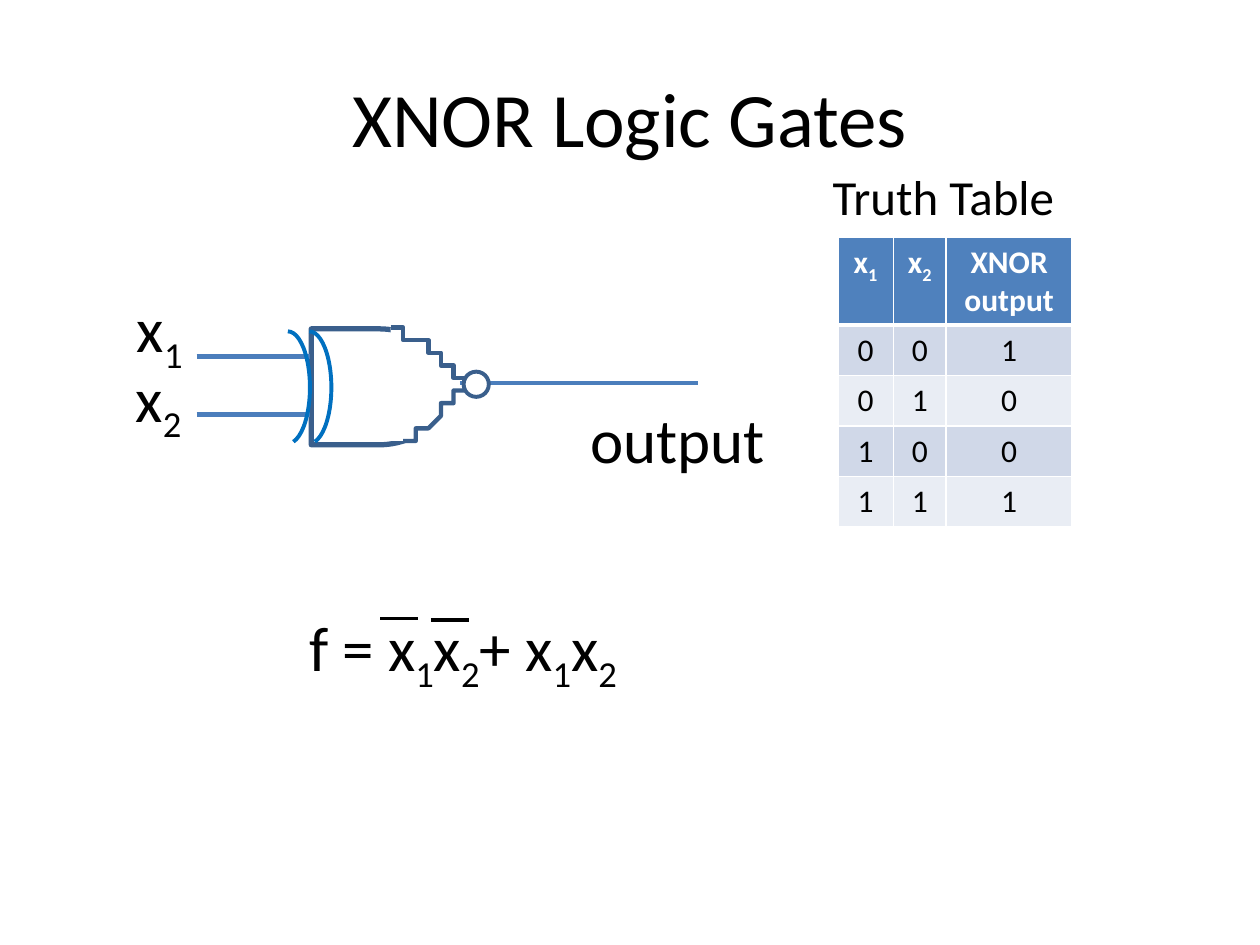
from lxml.etree import SubElement
from pptx import Presentation
from pptx.dml.color import RGBColor
from pptx.enum.shapes import MSO_CONNECTOR, MSO_SHAPE
from pptx.enum.text import MSO_ANCHOR, PP_ALIGN
from pptx.oxml.ns import qn
from pptx.util import Inches, Pt

BLACK, WHITE = "000000", "FFFFFF"
HEAD, BANDS = "4F81BD", ("D0D8E8", "E9EDF4")
WIRE, EDGE, ARC = "4B7EBC", "3A5F8C", "0070C0"


def unit(n):
    """One grid step is a tenth of an inch: 100 columns by 75 rows."""
    return Inches(n / 10)


def color(code):
    return RGBColor.from_string(code)


def curve(start, *parts, steps=12):
    """Points along a chain of cubic curves."""
    points = [start]
    for b, c, d in parts:
        a = points[-1]
        for i in range(1, steps + 1):
            t = i / steps
            u = 1 - t
            points.append(tuple(
                u**3 * p + 3 * u * u * t * q + 3 * u * t * t * r + t**3 * s
                for p, q, r, s in zip(a, b, c, d)))
    return points


class Board:
    font = "Calibri"

    def __init__(self, deck):
        self.slide = deck.slides.add_slide(deck.slide_layouts[6])
        self.shapes = self.slide.shapes

    def label(self, frame, words, size, ink=BLACK, bold=False, align=PP_ALIGN.LEFT):
        """Fill a frame; the sign after each underscore is a subscript."""
        para = frame.paragraphs[0]
        para.alignment = align
        font = para.font
        font.name, font.size, font.bold = self.font, Pt(size), bold
        font.color.rgb = color(ink)
        first, *rest = words.split("_")
        para.add_run().text = first
        for part in rest:
            sub = para.add_run()
            sub.text = part[0]
            sub.font._element.set("baseline", "-25000")
            if part[1:]:
                para.add_run().text = part[1:]

    def text(self, x, y, w, h, words, size, inset=1, anchor=MSO_ANCHOR.TOP, **look):
        frame = self.shapes.add_textbox(*map(unit, (x, y, w, h))).text_frame
        frame.word_wrap = True
        frame.margin_left = unit(inset)
        frame.vertical_anchor = anchor
        self.label(frame, words, size, **look)

    def paint(self, shape, fill, ink, width):
        shape.shadow.inherit = False
        if fill:
            shape.fill.solid()
            shape.fill.fore_color.rgb = color(fill)
        else:
            shape.fill.background()
        if ink:
            shape.line.color.rgb = color(ink)
            shape.line.width = Pt(width)
        else:
            shape.line.fill.background()

    def shape(self, kind, x, y, w, h, fill=None, ink=None, width=1, adjust=()):
        item = self.shapes.add_shape(kind, *map(unit, (x, y, w, h)))
        for i, value in enumerate(adjust):
            item.adjustments[i] = value
        self.paint(item, fill, ink, width)

    def bend(self, points, ink, width):
        start, *rest = points
        pen = self.shapes.build_freeform(*start, scale=unit(1))
        pen.add_line_segments(rest, close=False)
        self.paint(pen.convert_to_shape(), None, ink, width)

    def line(self, x, y, end, ink, width):
        item = self.shapes.add_connector(
            MSO_CONNECTOR.STRAIGHT, *map(unit, (x, y, end, y)))
        item.line.color.rgb = color(ink)
        item.line.width = Pt(width)
        SubElement(item._element.spPr, qn("a:effectLst"))

    def border(self, cell, low):
        props = cell._tc.get_or_add_tcPr()
        for i, side in enumerate(("lnL", "lnR", "lnT", "lnB")):
            width = low if side == "lnB" else 1
            edge = props.makeelement(qn("a:" + side), {"w": str(int(Pt(width)))})
            fill = SubElement(edge, qn("a:solidFill"))
            SubElement(fill, qn("a:srgbClr"), val=WHITE)
            props.insert(i, edge)

    def table(self, x, y, cols, rows, data, size):
        grid = self.shapes.add_table(
            len(rows), len(cols), *map(unit, (x, y, sum(cols), sum(rows)))).table
        for col, w in zip(grid.columns, cols):
            col.width = unit(w)
        for i, (row, h) in enumerate(zip(grid.rows, rows)):
            row.height = unit(h)
            top = i == 0
            for cell, words in zip(row.cells, data[i]):
                cell.fill.solid()
                cell.fill.fore_color.rgb = color(HEAD if top else BANDS[(i - 1) % 2])
                self.border(cell, 3 if top else 1)
                self.label(cell.text_frame, words, size, WHITE if top else BLACK,
                           top, PP_ALIGN.CENTER)


def main():
    deck = Presentation()
    deck.slide_width, deck.slide_height = unit(100), unit(75)
    board = Board(deck)

    # Title
    board.text(5, 3, 90, 12.5, "XNOR Logic Gates", 44,
               anchor=MSO_ANCHOR.MIDDLE, align=PP_ALIGN.CENTER)

    # Truth table
    board.text(64.2, 12.7, 23.2, 8.9, "Truth Table", 28, inset=1.88)
    pairs = [(a, b) for a in (0, 1) for b in (0, 1)]
    data = [("x_1", "x_2", "XNOR output")]
    data += [(str(a), str(b), str(int(a == b))) for a, b in pairs]
    board.table(66.5, 18.8, (4.4, 4.2, 10), (7,) + (4,) * 4, data, 18)

    # Input names and output wire
    for x, y, name in ((7.6, 22.5, "x_1"), (7.5, 28, "x_2")):
        board.text(x, y, 10, 7.1, name, 36, inset=3.26)
    board.line(36.5, 30.4, 55.4, WIRE, 2.5)

    # Gate body, inner arc and input wires
    sweep = dict(ink=ARC, width=2.25, adjust=(162, 50.54))
    board.shape(MSO_SHAPE.FLOWCHART_DELAY, 24.7, 26.1, 10.8, 9.2, ink=EDGE, width=3)
    board.shape(MSO_SHAPE.ARC, 22.8, 26.3, 3.5, 8.9, **sweep)
    for y in (28.3, 32.9):
        board.line(15.6, y, 24.6, WIRE, 2.5)

    # Pointed nose over the round end
    board.shape(MSO_SHAPE.RECTANGLE, 31, 26, 5, 9, fill=WHITE)
    tip = (36.7, 30.5)
    board.bend(curve((31, 26),
                     ((32.4, 26.4), (33.2, 26.8), (34.1, 27.4)),
                     ((35, 28.1), (35.9, 29.4), (36.3, 29.9)),
                     ((36.7, 30.4), (36.6, 30.5), tip)), EDGE, 2.5)
    board.bend(curve((31.5, 35.2),
                     ((32.7, 34.8), (33.5, 34.4), (34.3, 33.7)),
                     ((35.1, 33), (35.9, 31.6), (36.3, 31.1)),
                     ((36.7, 30.6), (36.6, 30.4), tip)), EDGE, 2.5)

    # Outer arc and inverting bubble
    board.shape(MSO_SHAPE.ARC, 21.1, 26.3, 3.5, 8.9, **sweep)
    board.shape(MSO_SHAPE.OVAL, 36.8, 29.5, 2, 2, fill=WHITE, ink=EDGE, width=2.25)

    # Formula with bars over the negated inputs
    board.text(22.4, 47.8, 33, 7.1, "f = x_1x_2+ x_1x_2", 36, inset=2.13)
    for x, y in ((30.2, 49.1), (34.2, 49.2)):
        board.line(x, y, x + 3, BLACK, 2)

    # Output name
    board.text(44.7, 31.3, 17, 7.1, "output", 36, inset=2.13)

    deck.save("out.pptx")


if __name__ == "__main__":
    main()
